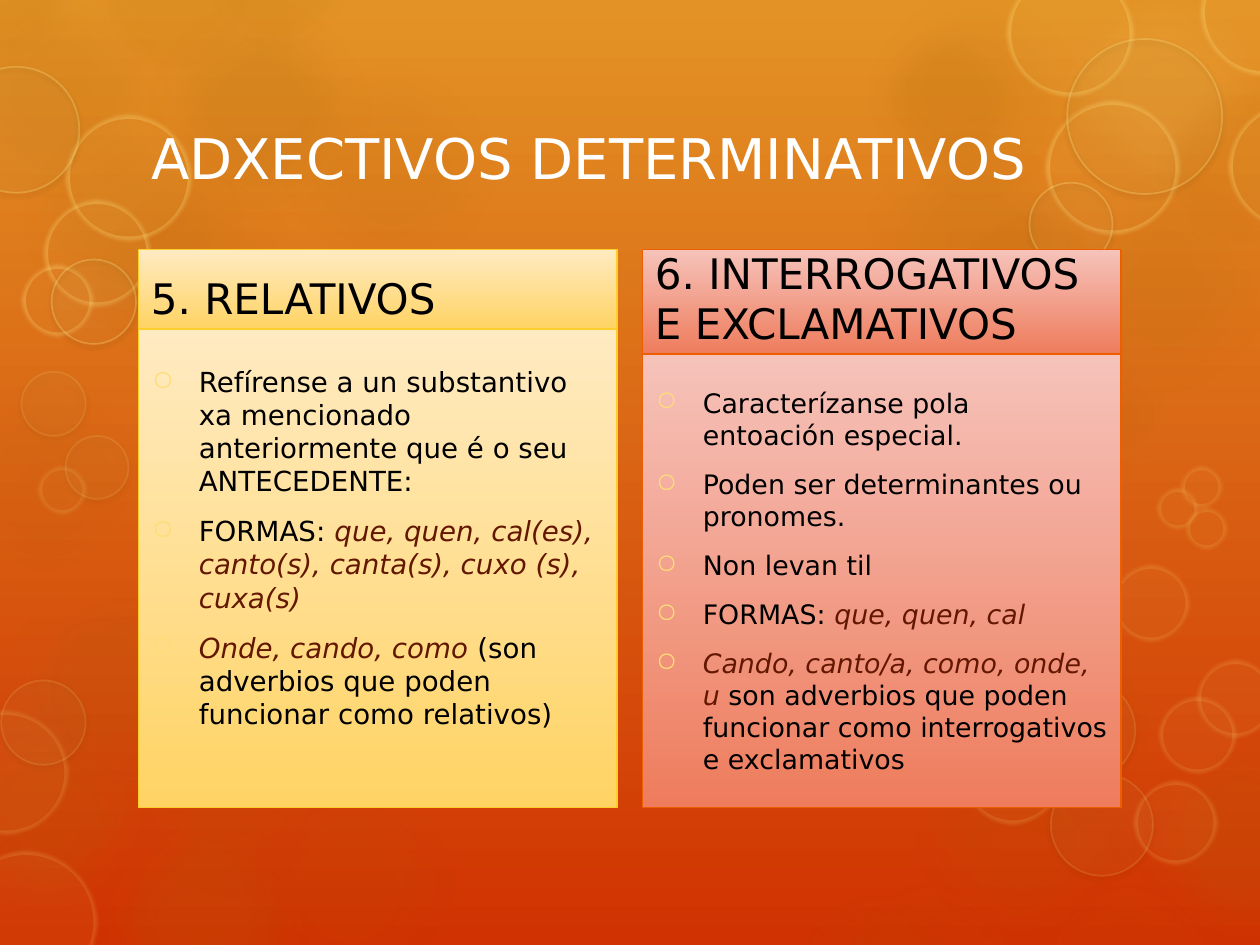
"""Build the slide on determinative adjectives: relatives, interrogatives and exclamatives."""
from dataclasses import dataclass
from typing import NamedTuple

from pptx import Presentation
from pptx.dml.color import RGBColor as Rgb
from pptx.enum.shapes import MSO_SHAPE as Kind
from pptx.enum.text import MSO_ANCHOR as Anchor, PP_ALIGN as Align
from pptx.oxml import parse_xml
from pptx.oxml.ns import nsdecls, qn
from pptx.oxml.xmlchemy import OxmlElement as Node
from pptx.util import Inches, Pt


@dataclass(frozen=True)
class Theme:
    font: str = "DejaVu Sans"
    title: float = 32
    head: float = 24
    white: str = "FFFFFF"
    ink: str = "000000"
    accent: str = "631701"
    bullet: str = "FEDD78"
    sky: tuple = ("E39325", "D03201")
    shade: str = "AE6D11"
    glow: str = "F1BD74"
    gold: str = "FFE281"


class Look(NamedTuple):
    fill: str
    line: str = ""
    width: float = 0
    clear: float = 0
    soft: float = 0


class Bubble(NamedTuple):
    x: float
    y: float
    size: float
    alpha: float


class Panel(NamedTuple):
    left: float
    split: float
    colors: tuple
    edge: str
    head: str
    size: float
    foot: float
    items: tuple


THEME = Theme()
TOP, BOTTOM, WIDE = 1.98, 6.41, 3.8
BIG = 2.09

HAZE = Look(THEME.shade, soft=25)
SUN = Look(THEME.gold, soft=25)
BLUR = Look(THEME.shade, THEME.glow, 14, 6, 12)
DIM = Look(THEME.shade, THEME.glow, 14, 4, 12)
RING = Look(THEME.gold, THEME.gold, 5, 30, 2.5)
FAINT = Look(THEME.gold, THEME.gold, 5, 15, 2.5)
CRISP = Look(THEME.gold, THEME.gold, 1, 30)
PALE = Look(THEME.gold, THEME.gold, 1, 15)


def even(alpha: float, *spots: tuple) -> list[Bubble]:
    return [Bubble(*spot, alpha) for spot in spots]


LAYERS = (
    (HAZE, [Bubble(x, y, BIG, alpha) for x, y, alpha in (
        (-0.26, 4.42, 8), (0.57, 1.2, 10), (2.05, 0.31, 10), (0.57, 6.27, 16),
        (-0.56, -0.33, 14), (1.01, -0.18, 20), (0, 0.72, 15))]),
    (SUN, even(10, (8.2, -0.33, BIG))),
    (HAZE, [Bubble(x, y, BIG, alpha) for x, y, alpha in (
        (6.69, -0.3, 10), (8.2, 1.2, 15), (8.81, 5.62, 16), (7.29, 4.77, 5),
        (-0.69, 5.41, 16), (0.77, 5.24, 8), (6.69, 0.86, 15), (7.06, 5.62, 10))]),
    (BLUR, even(10, (9.18, 0.65, 1.37), (6.94, 0.23, 1.14), (7.52, 1.59, 1.33),
                (7.89, 2.24, 1.14), (8.47, 2.91, 0.79), (0.75, -0.65, 1.3),
                (1.64, -0.75, 1.14), (-0.57, -0.58, 1.14))),
    (DIM, even(6, (0.3, 4.73, 1.53), (6.32, 7.1, 1.25), (6.7, 7.01, 1.36),
               (8.29, 7.01, 1.33))),
    (FAINT, even(5, (-0.36, 6.75, 1.13), (-0.44, 5.64, 0.98))),
    (CRISP, even(5, (-0.37, 0.53, 1))),
    (RING, even(5, (0.52, 0.91, 1), (0.35, 1.59, 0.84), (0.17, 2.1, 0.57),
                (7.99, -0.24, 1), (9.53, -0.4, 1), (9.75, 0.82, 1), (8.3, 0.8, 1.06))),
    (CRISP, even(5, (0.41, 2.06, 0.67), (8.47, 0.31, 1.23), (8.17, 1.45, 0.66))),
    (PALE, even(5, (0.01, 5.4, 0.67), (8.34, 6.14, 0.81), (8.2, 5.39, 0.81),
                (0.17, 2.95, 0.51), (0.52, 3.46, 0.5))),
    (FAINT, even(5, (7.63, 5.73, 0.81), (9, 6.2, 0.66), (8.83, 4.48, 0.61),
                 (9.2, 5.53, 0.61), (9.5, 5.24, 0.61), (9.37, 3.7, 0.33),
                 (9.18, 3.87, 0.33), (9.41, 4.03, 0.33), (0.3, 3.7, 0.38))),
    (HAZE, even(8, (1.73, 5.96, BIG), (-0.69, 2.82, BIG))),
    (HAZE, even(10, (6.75, 2.62, 1.33))),
)

PANELS = (
    Panel(1.1, 2.61, ("FFEBC2", "FFD364"), "FFCE2D", "5. RELATIVOS", 15.8, 0.38, (
        "Refírense a un substantivo xa mencionado anteriormente que é o seu ANTECEDENTE:",
        "FORMAS: _que, quen, cal(es), canto(s), canta(s), cuxo (s), cuxa(s)",
        "_Onde, cando, como _(son adverbios que poden funcionar como relativos)")),
    Panel(5.1, 2.81, ("F6C3BA", "EE7C5D"), "ED5E00", "6. INTERROGATIVOS E EXCLAMATIVOS",
          15.3, 0.05, (
              "Caracterízanse pola entoación especial.",
              "Poden ser determinantes ou pronomes.",
              "Non levan til",
              "FORMAS: _que, quen, cal",
              "_Cando, canto/a, como, onde, u _son adverbios que poden funcionar como "
              "interrogativos e exclamativos")),
)


def paint(fill, colors: tuple) -> None:
    fill.gradient()
    fill.gradient_angle = 270
    for stop, color in zip(fill.gradient_stops, colors):
        stop.color.rgb = Rgb.from_string(color)


def add_bubble(shapes, spot: Bubble, look: Look) -> None:
    shape = shapes.add_shape(Kind.OVAL, Inches(spot.x), Inches(spot.y),
                             Inches(spot.size), Inches(spot.size))
    shape.fill.solid()
    shape.fill.fore_color.rgb = Rgb.from_string(look.fill)
    if look.line:
        shape.line.color.rgb = Rgb.from_string(look.line)
        shape.line.width = Pt(look.width)
    else:
        shape.line.fill.background()
    props = shape.element.spPr
    for color, share in zip(props.iter(qn("a:srgbClr")), (spot.alpha, look.clear)):
        alpha = Node("a:alpha")
        alpha.set("val", str(share * 1000))
        color.append(alpha)
    shape.shadow.inherit = False
    effect = props.find(qn("a:effectLst"))
    if look.soft:
        effect.append(parse_xml(f'<a:softEdge {nsdecls("a")} rad="{Pt(look.soft)}"/>'))
    else:
        effect.append(parse_xml(
            f'<a:outerShdw {nsdecls("a")} blurRad="{Pt(3.1)}" dist="{Pt(1.6)}" dir="5400000">'
            '<a:srgbClr val="000000"><a:alpha val="38000"/></a:srgbClr></a:outerShdw>'))


def add_bullet(para) -> None:
    props = para._p.get_or_add_pPr()
    props.set("marL", str(Inches(0.38)))
    props.set("indent", str(Inches(-0.37)))
    color = Node("a:buClr")
    tint = Node("a:srgbClr")
    tint.set("val", THEME.bullet)
    color.append(tint)
    mark = Node("a:buChar")
    mark.set("char", "○")
    props.extend((color, mark))


def write(frame, items: tuple, size: float, color: str, anchor, bullets: bool = False) -> None:
    frame.word_wrap = True
    frame.vertical_anchor = anchor
    for index, item in enumerate(items):
        para = frame.add_paragraph() if index else frame.paragraphs[0]
        para.alignment = Align.LEFT
        if index:
            para.space_before = Pt(3.6)
        para.space_after = Pt(6)
        if bullets:
            add_bullet(para)
        para.font.name = THEME.font
        para.font.size = Pt(size)
        parts = item.split("_")
        if len(parts) == 1:
            para.font.color.rgb = Rgb.from_string(color)
        for turn, words in enumerate(parts):
            if words:
                run = para.add_run()
                run.text = words
                if len(parts) > 1:
                    run.font.italic = bool(turn % 2)
                    run.font.color.rgb = Rgb.from_string(THEME.accent if turn % 2 else color)


def add_box(shapes, panel: Panel, top: float, end: float):
    box = shapes.add_shape(Kind.RECTANGLE, Inches(panel.left), Inches(top),
                           Inches(WIDE), Inches(end - top))
    box.shadow.inherit = False
    paint(box.fill, panel.colors)
    box.line.color.rgb = Rgb.from_string(panel.edge)
    box.line.width = Pt(1)
    return box.text_frame


def add_panel(shapes, panel: Panel) -> None:
    head = add_box(shapes, panel, TOP, panel.split)
    write(head, (panel.head,), THEME.head, THEME.ink, Anchor.BOTTOM)
    body = add_box(shapes, panel, panel.split, BOTTOM)
    body.margin_bottom = Inches(panel.foot)
    write(body, panel.items, panel.size, THEME.ink, Anchor.MIDDLE, bullets=True)


def main() -> None:
    deck = Presentation()
    deck.slide_width, deck.slide_height = Inches(10), Inches(7.5)
    slide = deck.slides.add_slide(deck.slide_layouts[6])
    paint(slide.background.fill, THEME.sky)
    for look, spots in LAYERS:
        for spot in spots:
            add_bubble(slide.shapes, spot, look)
    title = slide.shapes.add_textbox(Inches(1.1), Inches(0.74), Inches(7.79), Inches(1.01))
    write(title.text_frame, ("ADXECTIVOS DETERMINATIVOS",), THEME.title, THEME.white,
          Anchor.MIDDLE)
    for panel in PANELS:
        add_panel(slide.shapes, panel)
    deck.save("out.pptx")


if __name__ == "__main__":
    main()
